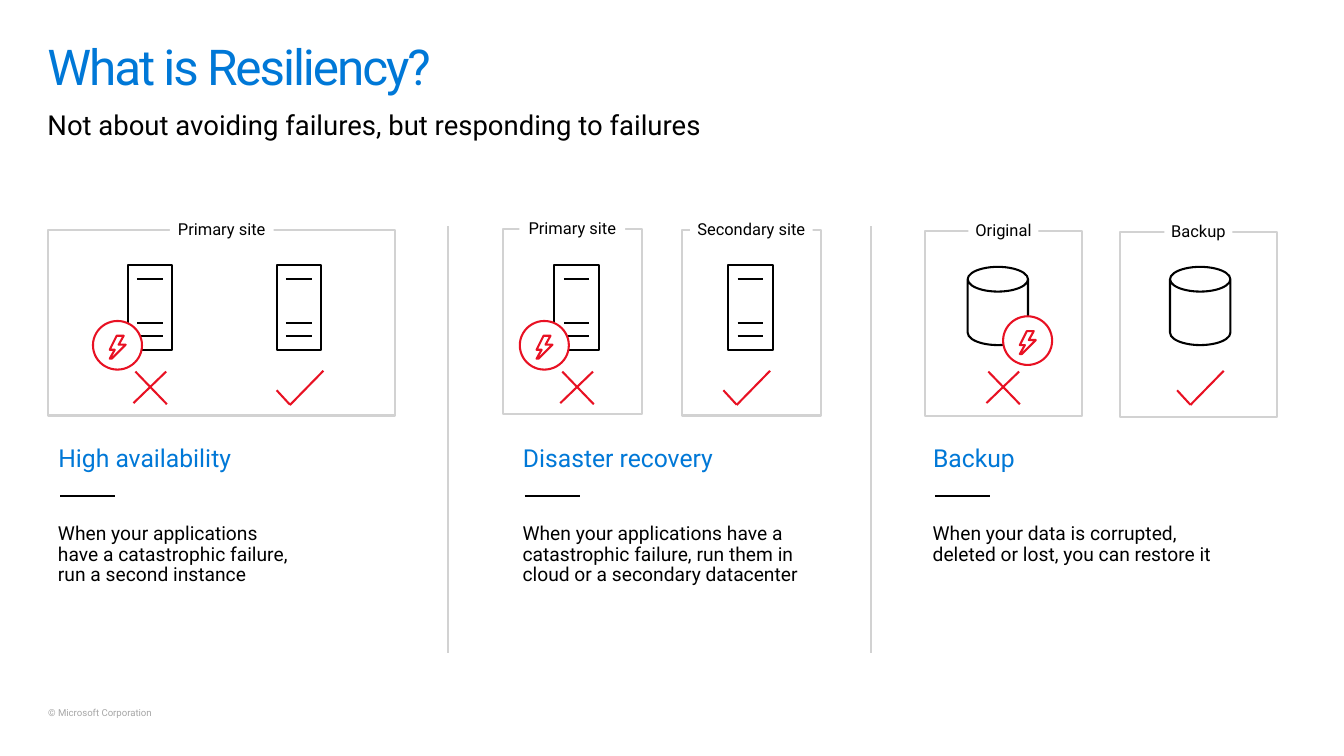
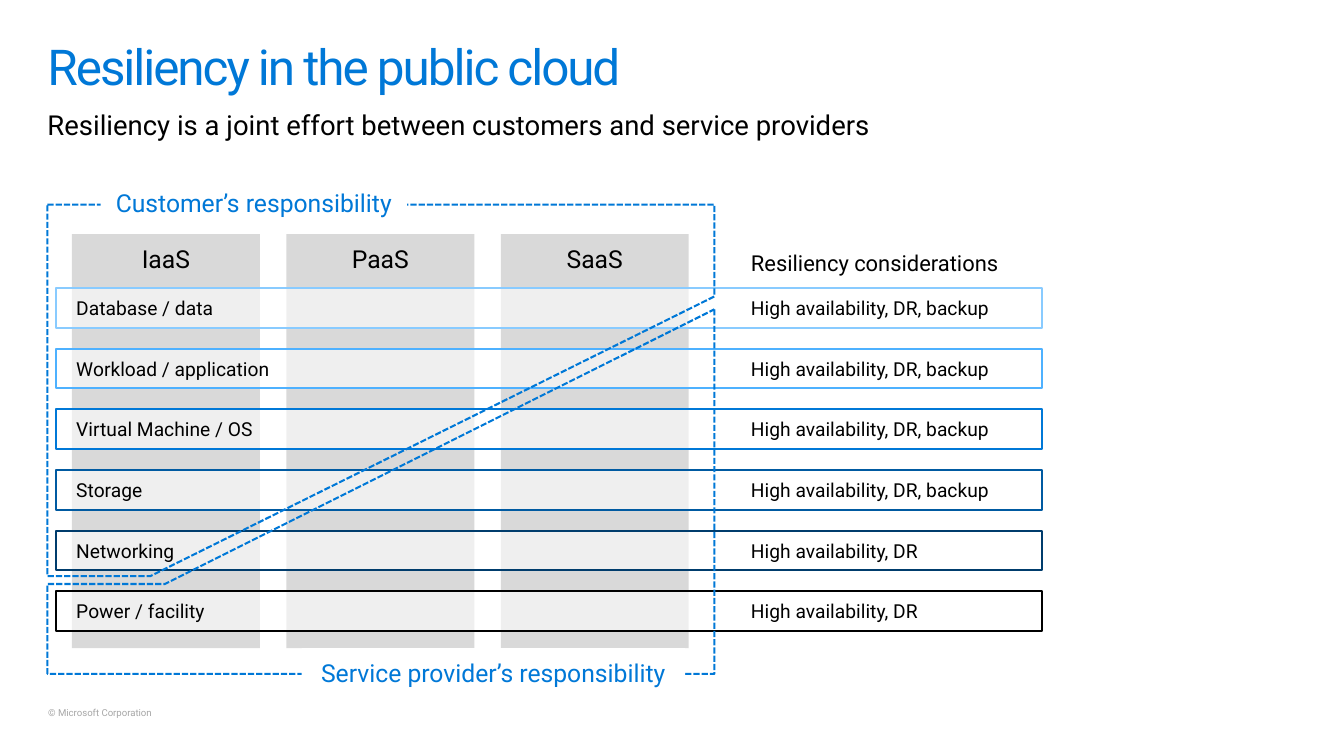
import pptx
import pptx.dml.color
import pptx.enum.dml
import pptx.enum.shapes
import pptx.enum.text
import pptx.oxml.ns
import pptx.util
from lxml import etree

Cm = pptx.util.Cm
Shape = pptx.enum.shapes.MSO_SHAPE
Align = pptx.enum.text.PP_ALIGN
Anchor = pptx.enum.text.MSO_ANCHOR
qn = pptx.oxml.ns.qn

FONT = "Roboto"
BLUE, RED, BLACK, WHITE = "0078D7", "E81123", "000000", "FFFFFF"
GRAY, COLUMN_GRAY, FOOTER_GRAY = "D2D2D2", "D9D9D9", "A6A6A6"


def paint(item, fill=None, line=None):
    if hasattr(item, "fill"):
        if fill:
            item.fill.solid()
            item.fill.fore_color.rgb = pptx.dml.color.RGBColor.from_string(fill)
        else:
            item.fill.background()
    if hasattr(item, "line"):
        if line:
            item.line.color.rgb = pptx.dml.color.RGBColor.from_string(line)
            item.line.width = pptx.util.Pt(1.5)
        else:
            item.line.fill.background()
        if hasattr(item, "shadow"):
            item.shadow.inherit = False
        else:
            etree.SubElement(item._element.spPr, qn("a:effectLst"))


def write(shape, text, size=14, color=BLACK, align=Align.LEFT, anchor=Anchor.TOP,
          insets=(0, 0, 0, 0), line_spacing=1.0, tracking=None, wrap=True):
    frame = shape.text_frame
    frame.auto_size = pptx.enum.text.MSO_AUTO_SIZE.NONE
    frame.word_wrap = wrap
    frame.vertical_anchor = anchor
    frame.margin_left, frame.margin_top, frame.margin_right, frame.margin_bottom = map(Cm, insets)
    paragraph = frame.paragraphs[0]
    paragraph.alignment = align
    paragraph.line_spacing = line_spacing
    run = paragraph.add_run()
    run.text = text
    run.font.name = FONT
    run.font.size = pptx.util.Pt(size)
    paint(run.font, fill=color)
    if tracking:
        run.font._element.set("spc", str(tracking))


presentation = pptx.Presentation()
presentation.slide_width = Cm(34.54)
presentation.slide_height = Cm(19.43)

headings = [
    ("What is Resiliency?", "Not about avoiding failures, but responding to failures"),
    ("Resiliency in the public cloud",
     "Resiliency is a joint effort between customers and service providers"),
]
for title, subtitle in headings:
    slide = presentation.slides.add_slide(presentation.slide_layouts[5])
    shape = slide.shapes.title
    shape.left, shape.top, shape.width, shape.height = Cm(1.22), Cm(0.64), Cm(32.13), Cm(2.16)
    write(shape, title, size=36, color=BLUE, insets=(0, 0.46, 0, 0), line_spacing=0.9,
          tracking=-150)
    shape = slide.shapes.add_textbox(Cm(1.22), Cm(2.77), Cm(32.13), Cm(0.86))
    write(shape, subtitle, size=20)
    shape = slide.shapes.add_textbox(Cm(1.24), Cm(18.21), Cm(2.79), Cm(0.28))
    write(shape, "© Microsoft Corporation", size=7, color=FOOTER_GRAY, line_spacing=0.9, wrap=False)

resiliency_slide, cloud_slide = presentation.slides

shapes = resiliency_slide.shapes
sites = [
    ("Primary site", 1.24, 5.92, 8.92, 2.67),
    ("Primary site", 12.93, 5.89, 3.56, 2.72),
    ("Secondary site", 17.53, 5.92, 3.56, 3.15),
    ("Original", 23.77, 5.94, 4.04, 1.8),
    ("Backup", 28.78, 5.96, 4.04, 1.75),
]
for label, left, top, width, label_width in sites:
    shape = shapes.add_shape(Shape.RECTANGLE, Cm(left), Cm(top), Cm(width), Cm(4.76))
    paint(shape, line=GRAY)
    label_left = left + (width - label_width) / 2
    shape = shapes.add_shape(Shape.RECTANGLE, Cm(label_left), Cm(top - 0.25),
                             Cm(label_width), Cm(0.5))
    paint(shape, fill=WHITE)
    write(shape, label, size=12, align=Align.CENTER, anchor=Anchor.MIDDLE, line_spacing=0.9)

SERVER_TOP, SERVER_WIDTH, SERVER_HEIGHT = 6.81, 1.14, 2.18
for left in (3.28, 7.11, 14.25, 18.72):
    right, bottom = left + SERVER_WIDTH, SERVER_TOP + SERVER_HEIGHT
    builder = shapes.build_freeform(Cm(left), Cm(SERVER_TOP))
    builder.add_line_segments([(Cm(right), Cm(SERVER_TOP)), (Cm(right), Cm(bottom)),
                               (Cm(left), Cm(bottom))], close=True)
    for slot in (0.36, 1.5, 1.83):
        builder.move_to(Cm(left + 0.24), Cm(SERVER_TOP + slot))
        builder.add_line_segments([(Cm(right - 0.24), Cm(SERVER_TOP + slot))], close=False)
    paint(builder.convert_to_shape(), line=BLACK)

for left in (24.87, 30.07):
    shape = shapes.add_shape(Shape.CAN, Cm(left), Cm(6.86), Cm(1.55), Cm(2.01))
    shape.adjustments[0] = 0.41
    paint(shape, line=BLACK)

bolt = [(0.48, 0.97), (0.84, 0.61), (0.66, 0.61), (0.79, 0.38),
        (0.61, 0.38), (0.43, 0.74), (0.56, 0.74), (0.43, 0.97)]
for left, top in ((2.39, 8.25), (13.36, 8.25), (25.78, 8.13)):
    shape = shapes.add_shape(Shape.OVAL, Cm(left), Cm(top), Cm(1.26), Cm(1.25))
    paint(shape, fill=WHITE, line=RED)
    points = [(Cm(left + x), Cm(top + y)) for x, y in bolt]
    builder = shapes.build_freeform(*points[0])
    builder.add_line_segments(points[1:], close=True)
    paint(builder.convert_to_shape(), line=RED)

lines = [(x, 5.82, x, 16.79, GRAY) for x in (11.51, 22.38)]
for x in (3.43, 14.4, 25.35):
    lines += [(x, 10.36, x + 0.84, 9.55, RED), (x + 0.05, 9.55, x + 0.86, 10.39, RED)]
for x in (7.11, 18.59, 30.25):
    lines += [(x, 10.03, x + 0.34, 10.4, RED), (x + 0.34, 10.41, x + 1.2, 9.53, RED)]

sections = [
    ("High availability", 0.99, 6.68,
     "When your applications have a catastrophic failure, run a second instance"),
    ("Disaster recovery", 12.93, 8.53,
     "When your applications have a catastrophic failure, run them in "
     "cloud or a secondary datacenter"),
    ("Backup", 23.47, 8.53, "When your data is corrupted, deleted or lost, you can restore it"),
]
for heading, left, width, description in sections:
    shape = shapes.add_textbox(Cm(left), Cm(11.07), Cm(8.53), Cm(1.7))
    write(shape, heading, size=18, color=BLUE, insets=(0.51, 0.41, 0.51, 0.41), line_spacing=0.9)
    shape = shapes.add_textbox(Cm(left + 0.25), Cm(13.21), Cm(width), Cm(2.13))
    write(shape, description, insets=(0.25, 0.25, 0.25, 0.25), line_spacing=0.9)
    lines.append((left + 0.56, 12.75, left + 1.97, 12.75, BLACK))

for x1, y1, x2, y2, color in lines:
    connector = shapes.add_connector(pptx.enum.shapes.MSO_CONNECTOR.STRAIGHT,
                                     Cm(x1), Cm(y1), Cm(x2), Cm(y2))
    paint(connector, line=color)

shapes = cloud_slide.shapes
for index, service in enumerate(("IaaS", "PaaS", "SaaS")):
    shape = shapes.add_shape(Shape.RECTANGLE, Cm(1.85 + 5.51 * index), Cm(6.02),
                             Cm(4.83), Cm(10.64))
    paint(shape, fill=COLUMN_GRAY)
    write(shape, service, size=18, align=Align.CENTER, insets=(0.25, 0.25, 0.25, 0.25))

shape = shapes.add_textbox(Cm(19.05), Cm(6.4), Cm(7.87), Cm(0.69))
write(shape, "Resiliency considerations", size=16, anchor=Anchor.MIDDLE, insets=(0.25, 0, 0.25, 0))

layers = [
    ("Database / data", "89CBFF", "High availability, DR, backup"),
    ("Workload / application", "4EB1FF", "High availability, DR, backup"),
    ("Virtual Machine / OS", BLUE, "High availability, DR, backup"),
    ("Storage", "005AA1", "High availability, DR, backup"),
    ("Networking", "003C6C", "High availability, DR"),
    ("Power / facility", BLACK, "High availability, DR"),
]
for index, (layer, color, consideration) in enumerate(layers):
    top = 7.4 + 1.56 * index
    shape = shapes.add_shape(Shape.RECTANGLE, Cm(1.45), Cm(top), Cm(25.32), Cm(1.02))
    paint(shape, fill=WHITE, line=color)
    fill_color = shape._element.spPr.find(qn("a:solidFill")).find(qn("a:srgbClr"))
    etree.SubElement(fill_color, qn("a:alpha")).set("val", "60000")
    write(shape, layer, anchor=Anchor.MIDDLE, insets=(0.51, 0, 0.25, 0))
    shape = shapes.add_textbox(Cm(19.05), Cm(top), Cm(6.96), Cm(1.02))
    write(shape, consideration, anchor=Anchor.MIDDLE, insets=(0.25, 0, 0.25, 0), wrap=False)

responsibilities = [
    ("Customer’s responsibility", 2.59, 4.57, 7.87,
     [(1.22, 5.26), (18.36, 5.26), (18.36, 7.62), (3.86, 14.81), (1.22, 14.81)]),
    ("Service provider’s responsibility", 7.75, 16.66, 9.86,
     [(18.36, 7.95), (18.36, 17.32), (1.22, 17.32), (1.22, 15.01), (4.24, 15.01)]),
]
for label, left, top, width, outline in responsibilities:
    points = [(Cm(x), Cm(y)) for x, y in outline]
    builder = shapes.build_freeform(*points[0])
    builder.add_line_segments(points[1:], close=True)
    shape = builder.convert_to_shape()
    paint(shape, line=BLUE)
    shape.line.dash_style = pptx.enum.dml.MSO_LINE.SQUARE_DOT
    shape = shapes.add_shape(Shape.RECTANGLE, Cm(left), Cm(top), Cm(width), Cm(1.27))
    paint(shape, fill=WHITE)
    write(shape, label, size=18, color=BLUE, align=Align.CENTER, anchor=Anchor.MIDDLE,
          insets=(0.25, 0, 0.25, 0))

presentation.save("out.pptx")
